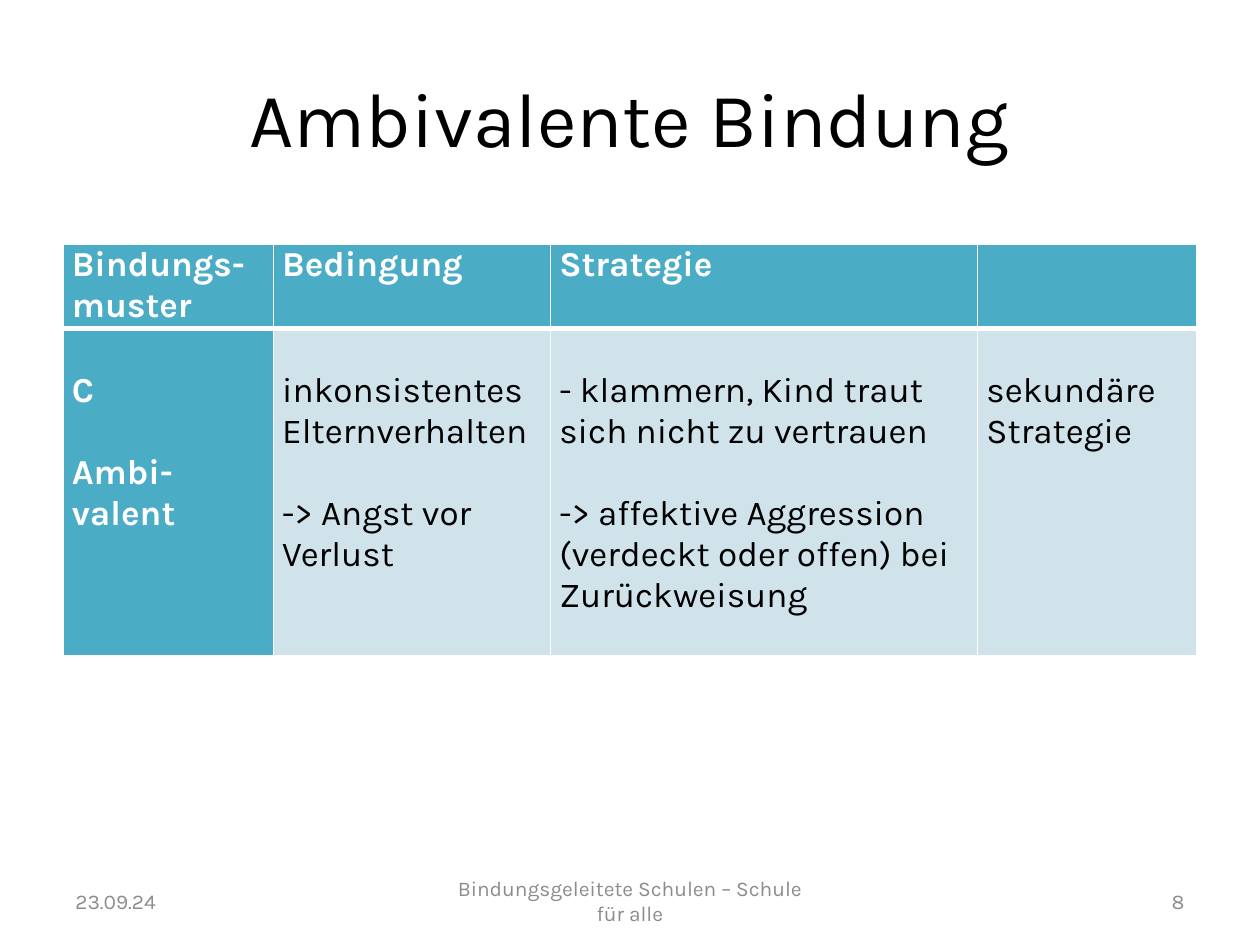
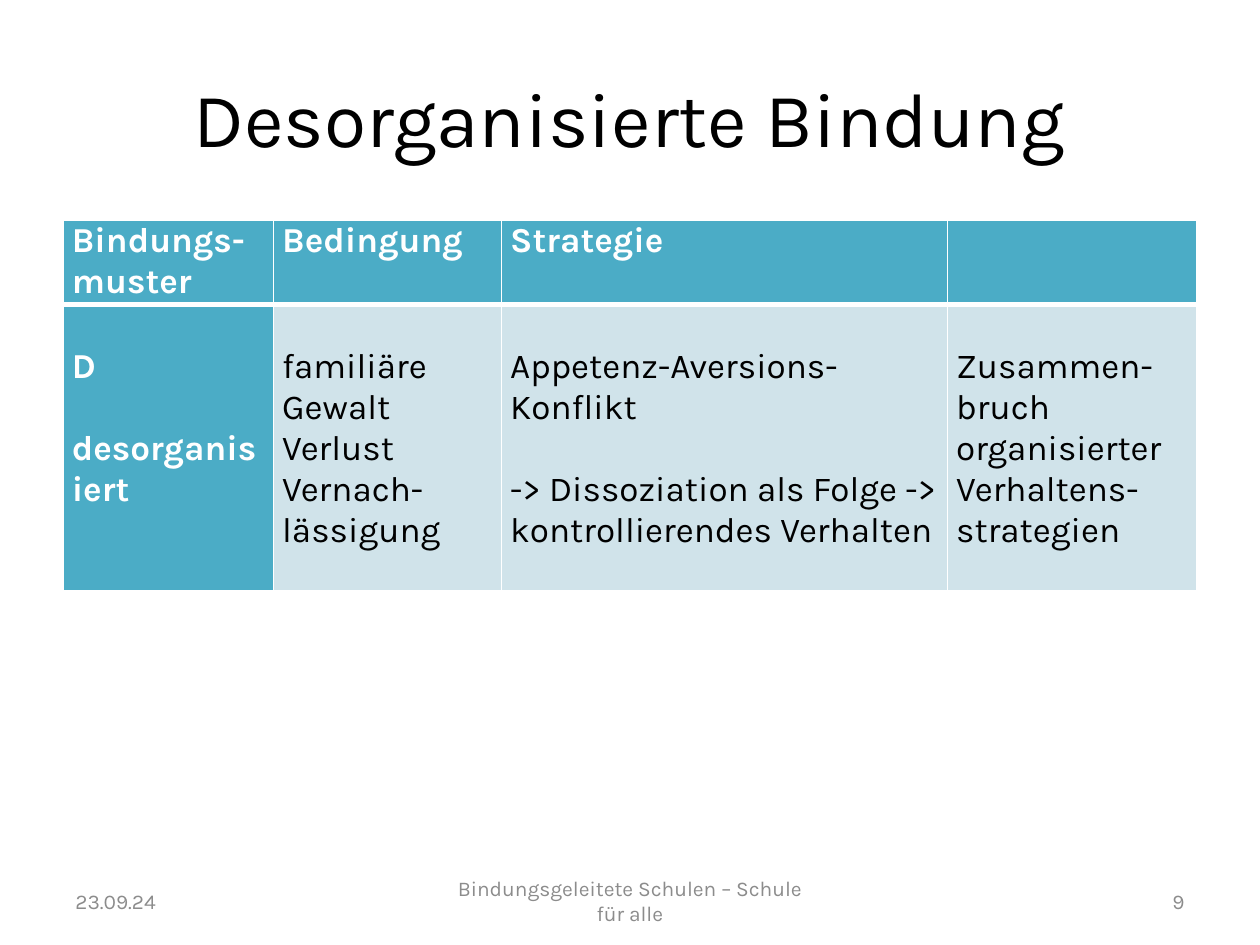
from lxml.etree import SubElement
from pptx import Presentation
from pptx.dml.color import RGBColor
from pptx.enum.text import MSO_ANCHOR as Anchor, PP_ALIGN as Align
from pptx.oxml.ns import qn
from pptx.util import Inches, Pt

FONT = "Karla"
BLACK = RGBColor(0x00, 0x00, 0x00)
WHITE = RGBColor(0xFF, 0xFF, 0xFF)
GREY = RGBColor(0x8C, 0x8C, 0x8C)
TEAL = RGBColor(0x4B, 0xAC, 0xC6)
PALE = RGBColor(0xD0, 0xE3, 0xEA)

TITLE_BOX = (0.5, 0.3, 9, 1.25)
FOOTER_BOX = (0.5, 6.95, 9, 0.4)
TABLE_LEFT = 0.5
HEADER_HEIGHT = 0.65
LINE_HEIGHT = 0.33
BLANK_LINE = Pt(23.4)
DATE = "23.09.24"
FOOTER = "Bindungsgeleitete Schulen – Schule für alle"
HEADINGS = ["Bindungs-muster", "Bedingung", "Strategie", ""]
GAP = object()

PATTERNS = [
    {
        "title": "Ambivalente Bindung",
        "number": 8,
        "top": 1.94,
        "widths": [1.67, 2.2, 3.39, 1.74],
        "body_height": 2.6,
        "body": [
            ["C", GAP, "Ambi-valent"],
            ["inkonsistentes Elternverhalten", GAP, "-> Angst vor Verlust"],
            ["- klammern, Kind traut sich nicht zu vertrauen", GAP,
             "-> affektive Aggression (verdeckt oder offen) bei Zurückweisung"],
            ["sekundäre", "Strategie"],
        ],
    },
    {
        "title": "Desorganisierte Bindung",
        "number": 9,
        "top": 1.75,
        "widths": [1.67, 1.81, 3.54, 1.98],
        "body_height": 2.27,
        "body": [
            ["D", GAP, "desorganisiert"],
            ["familiäre Gewalt", "Verlust", "Vernach-lässigung"],
            ["Appetenz-Aversions-Konflikt", GAP,
             "-> Dissoziation als Folge -> kontrollierendes Verhalten"],
            ["Zusammen-bruch organisierter Verhaltens-strategien"],
        ],
    },
]


def style_font(paragraph, size, color, bold=False):
    font = paragraph.font
    font.name, font.size, font.bold = FONT, Pt(size), bold
    font.color.rgb = color


def add_text(slide, box, text, size, color, align):
    frame = slide.shapes.add_textbox(*map(Inches, box)).text_frame
    frame.word_wrap = True
    frame.vertical_anchor = Anchor.MIDDLE
    paragraph = frame.paragraphs[0]
    paragraph.text = text
    paragraph.alignment = align
    style_font(paragraph, size, color)


def add_footer(slide, box, number):
    left, top, width, height = box
    side, middle = 2.33, 3.17
    parts = [
        (0, side, DATE, Align.LEFT),
        ((width - middle) / 2, middle, FOOTER, Align.CENTER),
        (width - side, side, str(number), Align.RIGHT),
    ]
    for offset, part_width, text, align in parts:
        add_text(slide, (left + offset, top, part_width, height), text, 12, GREY, align)


def set_borders(cell, **widths):
    properties = cell._tc.get_or_add_tcPr()
    for side in "LRTB":
        line = SubElement(properties, qn(f"a:ln{side}"), w=str(Pt(widths.get(side, 1))))
        fill = SubElement(line, qn("a:solidFill"))
        SubElement(fill, qn("a:srgbClr"), val=str(WHITE))


def fill_cell(cell, lines, fill, color, bold):
    cell.margin_left = cell.margin_right = Inches(0.07)
    cell.margin_top = cell.margin_bottom = 0
    cell.fill.solid()
    cell.fill.fore_color.rgb = fill
    frame = cell.text_frame
    paragraph = frame.paragraphs[0]
    space = 0
    for index, text in enumerate(lines):
        if text is GAP:
            space = BLANK_LINE
            continue
        if index:
            paragraph = frame.add_paragraph()
            paragraph.space_before = space
        paragraph.text = text
        style_font(paragraph, 20, color, bold)
        space = 0


def add_pattern_table(slide, left, top, widths, body_height, body):
    frame = slide.shapes.add_table(
        2, len(widths), Inches(left), Inches(top),
        Inches(sum(widths)), Inches(HEADER_HEIGHT + body_height))
    table = frame.table
    table.horz_banding = False
    table.rows[0].height = Inches(HEADER_HEIGHT)
    table.rows[1].height = Inches(body_height)
    for column, (width, heading, lines) in enumerate(zip(widths, HEADINGS, body)):
        table.columns[column].width = Inches(width)
        header_cell, body_cell = table.cell(0, column), table.cell(1, column)
        set_borders(header_cell, B=3)
        set_borders(body_cell, T=3)
        fill_cell(header_cell, [heading], TEAL, WHITE, True)
        if column == 0:
            fill_cell(body_cell, lines, TEAL, WHITE, True)
        else:
            fill_cell(body_cell, lines, PALE, BLACK, False)
        body_cell.margin_top = Inches(LINE_HEIGHT)


def add_pattern_slide(presentation, pattern):
    slide = presentation.slides.add_slide(presentation.slide_layouts[6])
    add_text(slide, TITLE_BOX, pattern["title"], 44, BLACK, Align.CENTER)
    add_footer(slide, FOOTER_BOX, pattern["number"])
    add_pattern_table(slide, TABLE_LEFT, pattern["top"], pattern["widths"],
                      pattern["body_height"], pattern["body"])


def main():
    presentation = Presentation()
    presentation.slide_width = Inches(10)
    presentation.slide_height = Inches(7.5)
    for pattern in PATTERNS:
        add_pattern_slide(presentation, pattern)
    presentation.save("out.pptx")


if __name__ == "__main__":
    main()
